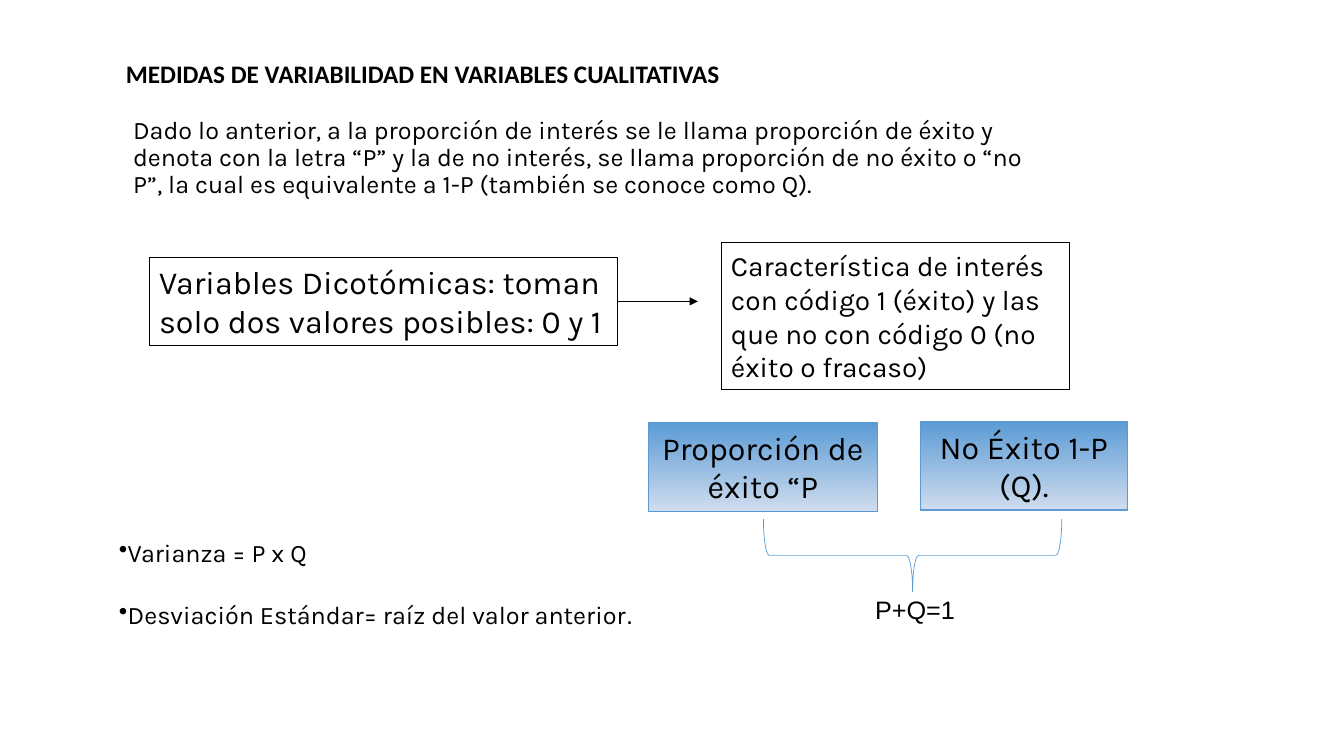
from dataclasses import dataclass

from lxml import etree
from pptx import Presentation, util as u
from pptx.dml.color import RGBColor
from pptx.enum import shapes, text
from pptx.oxml.ns import qn

COLS, ROWS = 40, 30
WIDE, HIGH = u.Inches(13.33), u.Inches(7.5)


@dataclass
class Theme:
    ink: RGBColor = RGBColor(0, 0, 0)
    blue: RGBColor = RGBColor(0x5B, 0x9B, 0xD5)
    pale: RGBColor = RGBColor(0xCF, 0xDC, 0xEE)
    body: str = "Karla"
    head: str = "Calibri"
    plain: str = "Arial"
    big: int = 23
    mid: int = 20
    base: int = 18
    line: float = 0.75
    thin: float = 0.5


T = Theme()


@dataclass
class Box:
    """An area in grid columns and rows."""
    x: float
    y: float
    w: float
    h: float

    def sub(self, x, y, w, h):
        return Box(self.x + x, self.y + y, w, h)

    def emu(self):
        return col(self.x), row(self.y), col(self.w), row(self.h)


def col(n):
    return u.Emu(round(n * WIDE / COLS))


def row(n):
    return u.Emu(round(n * HIGH / ROWS))


def style(par, size, face=T.body, bold=False, align=text.PP_ALIGN.LEFT):
    par.alignment = align
    font = par.font
    font.name, font.size, font.bold = face, u.Pt(size), bold
    font.color.rgb = T.ink


def label(slide, box, words, size, face, bold=False):
    frame = slide.shapes.add_textbox(*box.emu()).text_frame
    frame.word_wrap = True
    frame.text = words
    style(frame.paragraphs[0], size, face, bold)


def panel(slide, box, words, size, shade=False):
    """A framed text, with a blue gradient if shaded."""
    item = slide.shapes.add_shape(shapes.MSO_SHAPE.RECTANGLE, *box.emu())
    item.shadow.inherit = False
    item.line.width = u.Pt(T.line)
    item.line.color.rgb = T.blue if shade else T.ink
    if shade:
        item.fill.gradient()
        item.fill.gradient_angle = 270
        for stop, tone in zip(item.fill.gradient_stops, (T.blue, T.pale)):
            stop.color.rgb = tone
    else:
        item.fill.background()
    frame = item.text_frame
    frame.word_wrap = True
    frame.vertical_anchor = text.MSO_ANCHOR.MIDDLE
    frame.text = words
    align = text.PP_ALIGN.CENTER if shade else text.PP_ALIGN.LEFT
    style(frame.paragraphs[0], size, align=align)
    return item


def intro(slide, box):
    # Heading
    label(slide, box.sub(0, 0, box.w, 1.6),
          "MEDIDAS DE VARIABILIDAD EN VARIABLES CUALITATIVAS",
          T.base, T.head, True)
    # Title text
    title = slide.shapes.title
    place = box.sub(0.21, 1.64, box.w - 0.21, box.h - 1.64)
    title.left, title.top, title.width, title.height = place.emu()
    frame = title.text_frame
    frame.text = ("Dado lo anterior, a la proporción de interés se le llama "
                  "proporción de éxito y denota con la letra “P” y la de no "
                  "interés, se llama proporción de no éxito o “no P”, la cual "
                  "es equivalente a 1-P (también se conoce como Q).")
    frame.auto_size = text.MSO_AUTO_SIZE.NONE
    frame.word_wrap = True
    frame.vertical_anchor = text.MSO_ANCHOR.MIDDLE
    par = frame.paragraphs[0]
    style(par, T.base)
    par.line_spacing = 0.9


def flow(slide, box):
    # Variable and its coding
    kind = panel(slide, box.sub(0, 0.56, 13.95, 3.52),
                 "Variables Dicotómicas: toman solo dos valores posibles: 0 y 1",
                 T.big)
    panel(slide, box.sub(17.02, 0, 10.38, box.h),
          "Característica de interés con código 1 (éxito) y las que no con "
          "código 0 (no éxito o fracaso)", T.mid)
    # Arrow
    level = kind.top + kind.height // 2
    arrow = slide.shapes.add_connector(
        shapes.MSO_CONNECTOR.STRAIGHT, kind.left + kind.width, level,
        col(box.x + 16.33), level)
    arrow.begin_connect(kind, 3)
    arrow.line.color.rgb = T.ink
    arrow.line.width = u.Pt(T.line)
    etree.SubElement(arrow.line._get_or_add_ln(), qn("a:tailEnd"),
                     type="triangle")
    etree.SubElement(arrow._element.spPr, qn("a:effectLst"))


def total(slide, box):
    # Both proportions
    panel(slide, box.sub(0, 0.04, 6.84, 3.52), "Proporción de éxito “P",
          T.big, True)
    panel(slide, box.sub(8.11, 0, 6.15, 3.52), "No Éxito 1-P (Q).",
          T.big, True)
    # Brace, turned a quarter about its centre
    x, y, w, h = box.sub(3.43, 3.88, 8.88, 2.88).emu()
    brace = slide.shapes.add_shape(shapes.MSO_SHAPE.RIGHT_BRACE,
                                   x + (w - h) // 2, y + (h - w) // 2, h, w)
    brace.rotation = 90
    brace.shadow.inherit = False
    brace.fill.background()
    brace.line.color.rgb = T.blue
    brace.line.width = u.Pt(T.thin)
    # Sum
    label(slide, box.sub(6.46, 6.68, 4.71, 1.6), "P+Q=1", T.base, T.plain)


def notes(slide, box):
    # Bulleted formulas
    frame = slide.shapes.add_textbox(*box.emu()).text_frame
    frame.word_wrap = True
    frame.text = ("Varianza = P x Q\n"
                  "Desviación Estándar= raíz del valor anterior")
    for par in frame.paragraphs:
        style(par, T.base)
        prop = par._p.get_or_add_pPr()
        dot = etree.Element(qn("a:buChar"), char="•")
        prop.insert_element_before(dot, "a:tabLst", "a:defRPr", "a:extLst")
    last = frame.paragraphs[1]
    last.space_before = u.Pt(23)
    end = last.add_run()
    end.text = "."
    end.font.name = T.plain


def main():
    deck = Presentation()
    deck.slide_width, deck.slide_height = WIDE, HIGH
    slide = deck.slides.add_slide(deck.slide_layouts[5])
    flow(slide, Box(4.44, 9.64, 27.4, 5.8))
    total(slide, Box(19.29, 16.72, 14.26, 8.28))
    notes(slide, Box(3.24, 21.12, 18.69, 5.88))
    intro(slide, Box(3.45, 2.12, 27.91, 6.68))
    deck.save("out.pptx")


if __name__ == "__main__":
    main()
